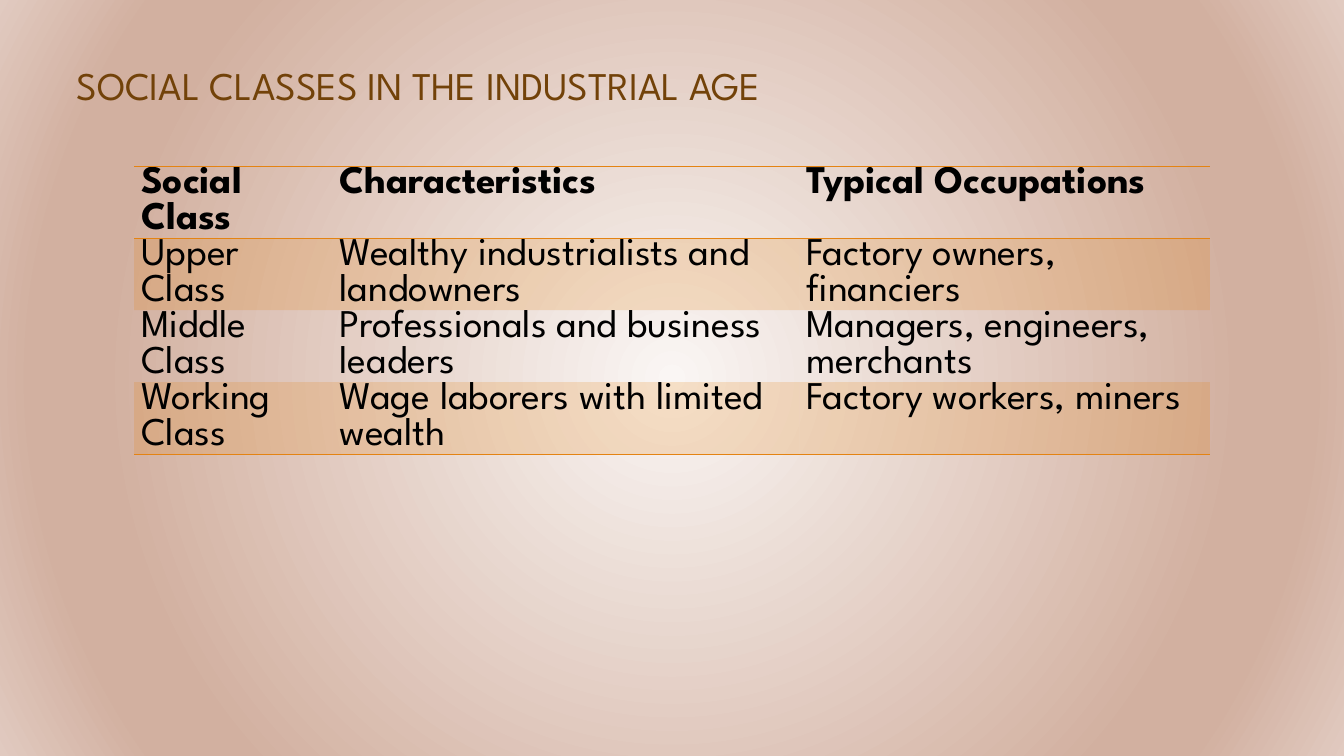
import pptx
import pptx.dml.color
import pptx.enum.text
import pptx.oxml
import pptx.oxml.ns
import pptx.util
from pptx.util import Inches

FONT = "League Spartan"
ORANGE = "E48312"
DRAWING_NS = pptx.oxml.ns.nsdecls("a")


def color(hex_text):
    return pptx.dml.color.RGBColor.from_string(hex_text)


def style_text(text_frame, hex_text, bold):
    for run in text_frame.paragraphs[0].runs:
        run.font.name = FONT
        run.font.size = pptx.util.Pt(28)
        run.font.bold = bold
        run.font.color.rgb = color(hex_text)


presentation = pptx.Presentation()
presentation.slide_width = Inches(13.33)
presentation.slide_height = Inches(7.5)
slide = presentation.slides.add_slide(presentation.slide_layouts[5])

# Radial background, light in the middle
background_fill = slide.background.fill
background_fill.solid()
background_fill.fore_color.rgb = color("D2B0A0")
gradient_stops = [(0, "FAF6F4"), (74, "D2B0A0"), (83, "D2B0A0"), (100, "E1CAC0")]
stops_xml = "".join(
    f'<a:gs pos="{percent * 1000}"><a:srgbClr val="{hex_text}"/></a:gs>'
    for percent, hex_text in gradient_stops
)
radial_gradient = pptx.oxml.parse_xml(
    f'<a:gradFill {DRAWING_NS} rotWithShape="1"><a:gsLst>{stops_xml}</a:gsLst>'
    '<a:path path="circle"><a:fillToRect l="50000" t="50000" r="50000" b="50000"/>'
    "</a:path></a:gradFill>"
)
solid_fill = slide.background._cSld.find(".//" + pptx.oxml.ns.qn("a:solidFill"))
solid_fill.getparent().replace(solid_fill, radial_gradient)

title = slide.shapes.title
title.left, title.top = Inches(0.66), Inches(0.25)
title.width, title.height = Inches(11.67), Inches(0.88)
title.text_frame.text = "SOCIAL CLASSES IN THE INDUSTRIAL AGE"
title.text_frame.auto_size = pptx.enum.text.MSO_AUTO_SIZE.NONE
title.text_frame.vertical_anchor = pptx.enum.text.MSO_ANCHOR.BOTTOM
title.text_frame.paragraphs[0].alignment = pptx.enum.text.PP_ALIGN.LEFT
title.text_frame.paragraphs[0].line_spacing = 0.9
style_text(title.text_frame, "724209", False)

social_classes = [
    ("Social Class", "Characteristics", "Typical Occupations"),
    ("Upper Class", "Wealthy industrialists and landowners", "Factory owners, financiers"),
    ("Middle Class", "Professionals and business leaders", "Managers, engineers, merchants"),
    ("Working Class", "Wage laborers with limited wealth", "Factory workers, miners"),
]
column_widths = [1.97, 4.63, 4.07]
row_height = 0.71
ruled_edges = {0, 1, len(social_classes)}

class_table = slide.shapes.add_table(
    len(social_classes), len(column_widths), Inches(1.33), Inches(1.65),
    Inches(sum(column_widths)), Inches(row_height * len(social_classes)),
).table
class_table.horz_banding = False
for column, width in zip(class_table.columns, column_widths):
    column.width = Inches(width)

for row_index, entries in enumerate(social_classes):
    class_table.rows[row_index].height = Inches(row_height)
    for column_index, entry in enumerate(entries):
        cell = class_table.cell(row_index, column_index)
        cell.margin_left = cell.margin_right = Inches(0.07)
        cell.margin_top = cell.margin_bottom = 0
        cell.text_frame.text = entry
        style_text(cell.text_frame, "000000", row_index == 0)

        cell_properties = cell._tc.get_or_add_tcPr()
        if row_index % 2:
            cell.fill.solid()
            cell.fill.fore_color.rgb = color(ORANGE)
            band_color = cell_properties.find(".//" + pptx.oxml.ns.qn("a:srgbClr"))
            band_color.append(pptx.oxml.parse_xml(f'<a:alpha {DRAWING_NS} val="20000"/>'))
        else:
            cell.fill.background()

        ruled_sides = {
            "lnL": False,
            "lnR": False,
            "lnT": row_index in ruled_edges,
            "lnB": row_index + 1 in ruled_edges,
        }
        for position, (side, ruled) in enumerate(ruled_sides.items()):
            paint = (
                f'<a:solidFill><a:srgbClr val="{ORANGE}"/></a:solidFill>'
                if ruled else "<a:noFill/>"
            )
            border = pptx.oxml.parse_xml(f'<a:{side} {DRAWING_NS} w="12700">{paint}</a:{side}>')
            cell_properties.insert(position, border)

presentation.save("out.pptx")
